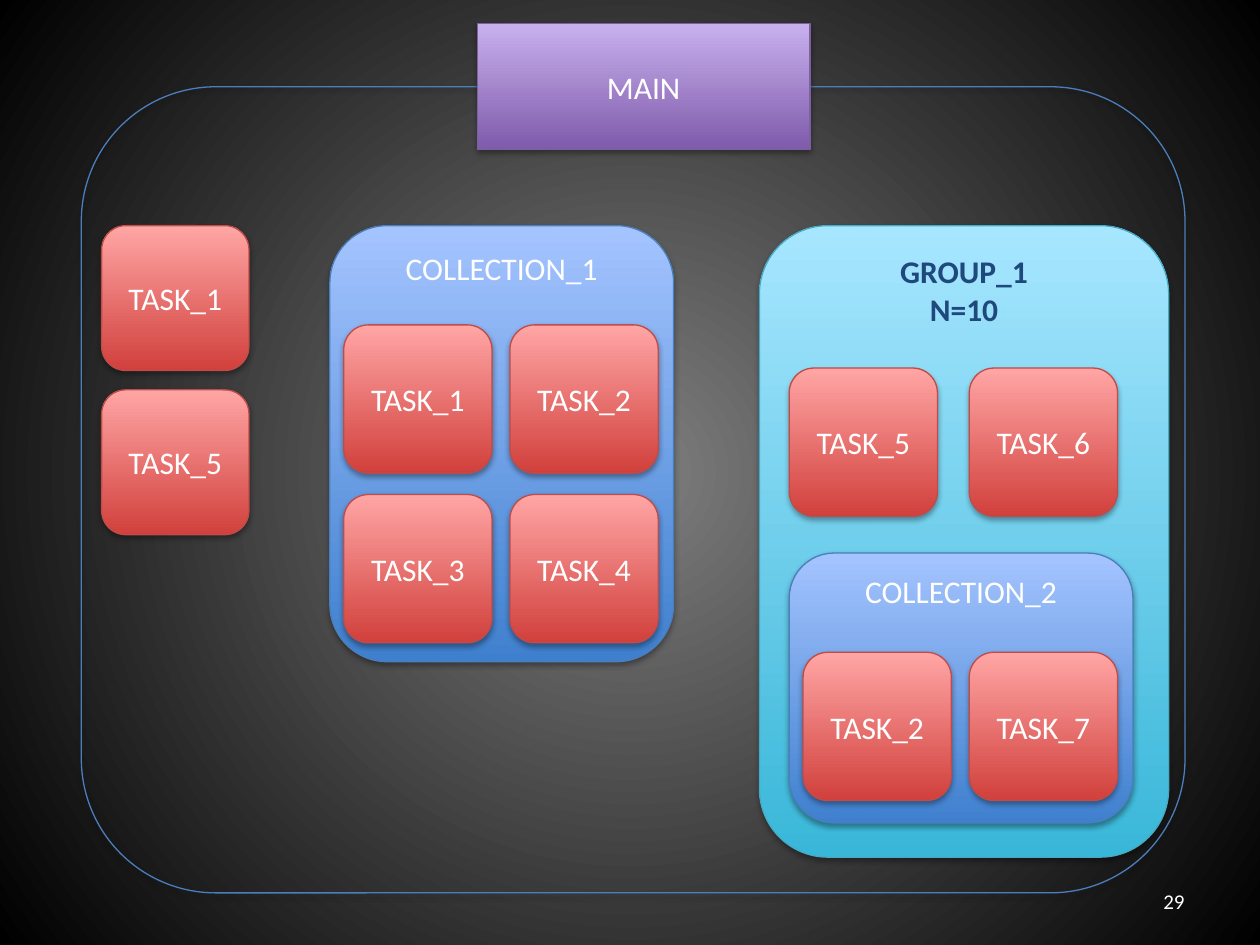
from pptx import Presentation
from pptx.dml.color import RGBColor
from pptx.enum.shapes import MSO_SHAPE
from pptx.enum.text import MSO_ANCHOR, PP_ALIGN
from pptx.oxml import parse_xml
from pptx.oxml.ns import nsdecls, qn
from pptx.util import Cm, Pt

ROUNDED = MSO_SHAPE.FLOWCHART_ALTERNATE_PROCESS
RECT = MSO_SHAPE.RECTANGLE
TOP, MIDDLE = MSO_ANCHOR.TOP, MSO_ANCHOR.MIDDLE
CENTER, RIGHT = PP_ALIGN.CENTER, PP_ALIGN.RIGHT

WHITE = RGBColor(0xFF, 0xFF, 0xFF)
BLACK = RGBColor(0x00, 0x00, 0x00)
GRAY = RGBColor(0x7F, 0x7F, 0x7F)
NAVY = RGBColor(0x1F, 0x49, 0x7D)
BLUE_LINE = RGBColor(0x4B, 0x7E, 0xBC)

# Each style: bottom fill, top fill, line
BLUE = (RGBColor(0x3F, 0x80, 0xCE), RGBColor(0xA4, 0xC4, 0xFF), BLUE_LINE)
CYAN = (RGBColor(0x39, 0xB7, 0xD8), RGBColor(0xA7, 0xE6, 0xFF), RGBColor(0x46, 0xAA, 0xC5))
PURPLE = (RGBColor(0x7F, 0x5B, 0xAB), RGBColor(0xC8, 0xB0, 0xED), RGBColor(0x7D, 0x60, 0xA0))
RED = (RGBColor(0xD1, 0x40, 0x3C), RGBColor(0xFF, 0xA6, 0xA5), RGBColor(0xBF, 0x4C, 0x48))

FONT = "Calibri"
TASK = 2.99
COLLECTION_W = 6.93
SHADOW = (
    f'<a:effectLst {nsdecls("a")}><a:outerShdw blurRad="40000" dist="23000" '
    'dir="5400000" rotWithShape="0"><a:srgbClr val="000000"><a:alpha val="35000"/>'
    '</a:srgbClr></a:outerShdw></a:effectLst>'
)
CIRCLE = (
    f'<a:path {nsdecls("a")} path="circle">'
    '<a:fillToRect l="50000" t="50000" r="50000" b="50000"/></a:path>'
)


def set_gradient(fill, first, last):
    fill.gradient()
    for stop, color in zip(fill.gradient_stops, (first, last)):
        stop.color.rgb = color


def paint_background(s):
    set_gradient(s.background.fill, GRAY, BLACK)
    grad = s.element.find(".//" + qn("a:gradFill"))
    grad.replace(grad.find(qn("a:lin")), parse_xml(CIRCLE))


def write(tf, lines, size=18, color=WHITE, bold=False, align=CENTER, anchor=MIDDLE):
    tf.word_wrap = True
    tf.vertical_anchor = anchor
    for i, line in enumerate(lines):
        p = tf.add_paragraph() if i else tf.paragraphs[0]
        p.alignment = align
        r = p.add_run()
        r.text = line
        r.font.name = FONT
        r.font.size = Pt(size)
        r.font.bold = bold
        r.font.color.rgb = color


def add_box(s, x, y, w, h, style=None, lines=(), kind=ROUNDED, **text):
    """Add a shadowed box; without a style it is a blue outline only."""
    sp = s.shapes.add_shape(kind, Cm(x), Cm(y), Cm(w), Cm(h))
    if style:
        bottom, top, line = style
        set_gradient(sp.fill, bottom, top)
        sp.fill.gradient_angle = 90
    else:
        line = BLUE_LINE
        sp.fill.background()
    sp.line.color.rgb = line
    sp.line.width = Pt(0.75)
    sp.element.spPr.append(parse_xml(SHADOW))
    write(sp.text_frame, lines, **text)


def add_tasks(s, x, y, numbers, columns, dx, dy, w=TASK, h=TASK):
    """Lay tasks out row by row, dx and dy apart."""
    for i, number in enumerate(numbers):
        row, col = divmod(i, columns)
        add_box(s, x + col * dx, y + row * dy, w, h, RED, [f"TASK_{number}"])


def add_collection(s, x, y, h, number, tasks):
    add_box(s, x, y, COLLECTION_W, h, BLUE, [f"COLLECTION_{number}"], anchor=TOP)
    add_tasks(s, x + 0.28, y + 2, tasks, columns=2, dx=3.35, dy=3.42)


def add_group(s, x, y, w, h):
    add_box(s, x, y, w, h, CYAN, ["GROUP_1", "N=10"], color=NAVY, bold=True, anchor=TOP)
    add_tasks(s, x + 0.6, y + 2.87, (5, 6), columns=2, dx=3.63, dy=0)
    add_collection(s, x + 0.6, y + 6.6, 5.44, 2, (2, 7))


def add_main(s, x, y, w, h):
    add_box(s, x, y, w, h)
    add_box(s, x + 7.98, y - 1.27, 6.71, 2.54, PURPLE, ["MAIN"], kind=RECT)


def add_page_number(s, x, y, w, h):
    sp = s.shapes.add_textbox(Cm(x), Cm(y), Cm(w), Cm(h))
    write(sp.text_frame, ["29"], size=12, align=RIGHT)


def main():
    prs = Presentation()
    prs.slide_width, prs.slide_height = Cm(25.4), Cm(19.05)
    s = prs.slides.add_slide(prs.slide_layouts[6])
    paint_background(s)
    top = 4.55
    add_main(s, 1.64, 1.75, 22.25, 16.25)
    add_tasks(s, 2.05, top, (1, 5), columns=1, dx=0, dy=3.31, w=2.97, h=2.92)
    add_collection(s, 6.65, top, 8.79, 1, (1, 2, 3, 4))
    add_group(s, 15.31, top, 8.25, 12.73)
    add_page_number(s, 18.2, 17.66, 5.93, 1.01)
    prs.save("out.pptx")


if __name__ == "__main__":
    main()
